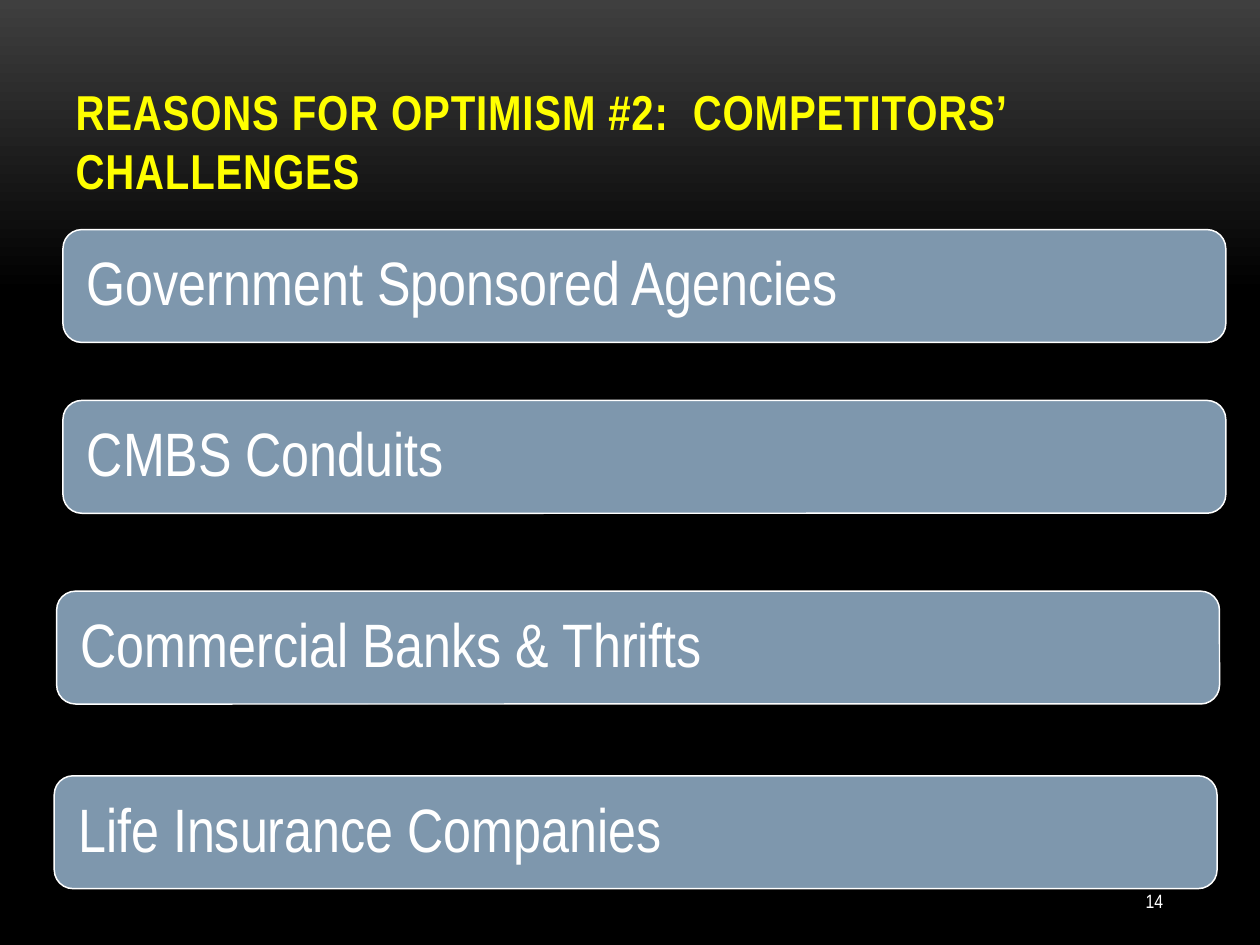
from copy import deepcopy

from pptx import Presentation
from pptx.dml.color import RGBColor
from pptx.enum.shapes import MSO_SHAPE
from pptx.enum.text import MSO_ANCHOR, MSO_AUTO_SIZE, PP_ALIGN
from pptx.oxml.ns import qn
from pptx.util import Pt

FONT = "Arial Narrow"
WHITE = RGBColor(0xFF, 0xFF, 0xFF)
YELLOW = RGBColor(0xFF, 0xFF, 0x00)
BLACK = RGBColor(0x00, 0x00, 0x00)
CHARCOAL = RGBColor(0x3F, 0x3F, 0x3F)
STEEL = RGBColor(0x7E, 0x97, 0xAD)

BAR_WIDTH, BAR_HEIGHT = 664.5, 64.5
COMPETITORS = [
    ("Government Sponsored Agencies", 36, 131.2),
    ("CMBS Conduits", 36, 228.8),
    ("Commercial Banks & Thrifts", 32.4, 337.8),
    ("Life Insurance Companies", 31, 443.3),
]


def style_text(paragraph, size, color, bold=False):
    """Give every run of a paragraph the slide's font."""
    for span in paragraph.runs:
        span.font.name = FONT
        span.font.size = Pt(size)
        span.font.bold = bold
        span.font.color.rgb = color


def paint_background(page):
    """Fade the page from charcoal at the top to black."""
    fill = page.background.fill
    fill.gradient()
    fill.gradient_angle = 270
    for stop, color, position in zip(fill.gradient_stops, (CHARCOAL, BLACK), (0, 0.31)):
        stop.color.rgb = color
        stop.position = position
    last_stop = list(page.element.iter(qn("a:gs")))[-1]
    final_stop = deepcopy(last_stop)
    final_stop.set("pos", "100000")
    last_stop.addnext(final_stop)


def place_title(page, left, top, width, height):
    """Write the heading in the title placeholder."""
    title = page.shapes.title
    title.left, title.top, title.width, title.height = map(Pt, (left, top, width, height))
    frame = title.text_frame
    frame.text = "REASONS FOR OPTIMISM #2:  COMPETITORS’ CHALLENGES"
    frame.word_wrap = True
    frame.auto_size = MSO_AUTO_SIZE.NONE
    frame.vertical_anchor = MSO_ANCHOR.BOTTOM
    paragraph = frame.paragraphs[0]
    paragraph.alignment = PP_ALIGN.LEFT
    style_text(paragraph, 28, YELLOW, bold=True)
    for span in paragraph.runs:
        span.font._element.set("spc", "50")


def place_bar(page, text, left, top, width, height):
    """Draw one rounded bar naming a competitor."""
    bar = page.shapes.add_shape(
        MSO_SHAPE.ROUNDED_RECTANGLE, *map(Pt, (left, top, width, height))
    )
    bar.shadow.inherit = False
    bar.fill.solid()
    bar.fill.fore_color.rgb = STEEL
    bar.line.color.rgb = WHITE
    bar.line.width = Pt(0.85)
    frame = bar.text_frame
    frame.text = text
    frame.word_wrap = True
    frame.vertical_anchor = MSO_ANCHOR.MIDDLE
    frame.margin_left = frame.margin_right = Pt(10.5)
    frame.margin_top = frame.margin_bottom = Pt(10.5)
    paragraph = frame.paragraphs[0]
    paragraph.alignment = PP_ALIGN.LEFT
    paragraph.line_spacing = 0.9
    style_text(paragraph, 35, WHITE)


def place_page_number(page, left, top, width, height):
    """Write the page number at the lower right."""
    box = page.shapes.add_textbox(*map(Pt, (left, top, width, height)))
    frame = box.text_frame
    frame.text = "14"
    frame.word_wrap = True
    frame.vertical_anchor = MSO_ANCHOR.MIDDLE
    paragraph = frame.paragraphs[0]
    paragraph.alignment = PP_ALIGN.RIGHT
    style_text(paragraph, 11, WHITE)


def main():
    """Build the deck and save it."""
    deck = Presentation()
    deck.slide_width, deck.slide_height = Pt(720), Pt(540)
    page = deck.slides.add_slide(deck.slide_layouts[5])
    paint_background(page)
    place_title(page, 36, 36, 648, 81.4)
    place_page_number(page, 594, 500.4, 77.8, 28.8)
    for text, left, top in COMPETITORS:
        place_bar(page, text, left, top, BAR_WIDTH, BAR_HEIGHT)
    deck.save("out.pptx")


if __name__ == "__main__":
    main()
